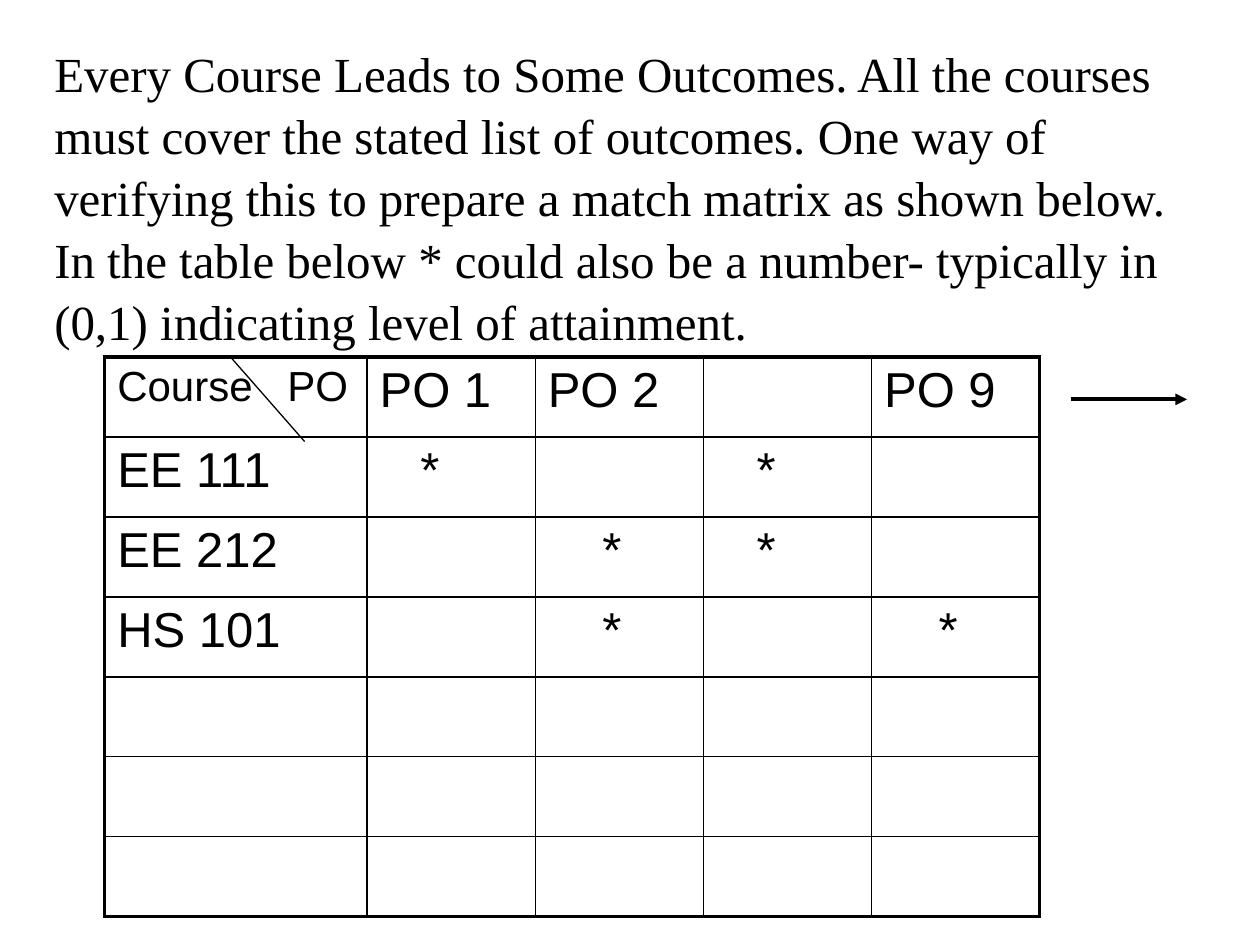
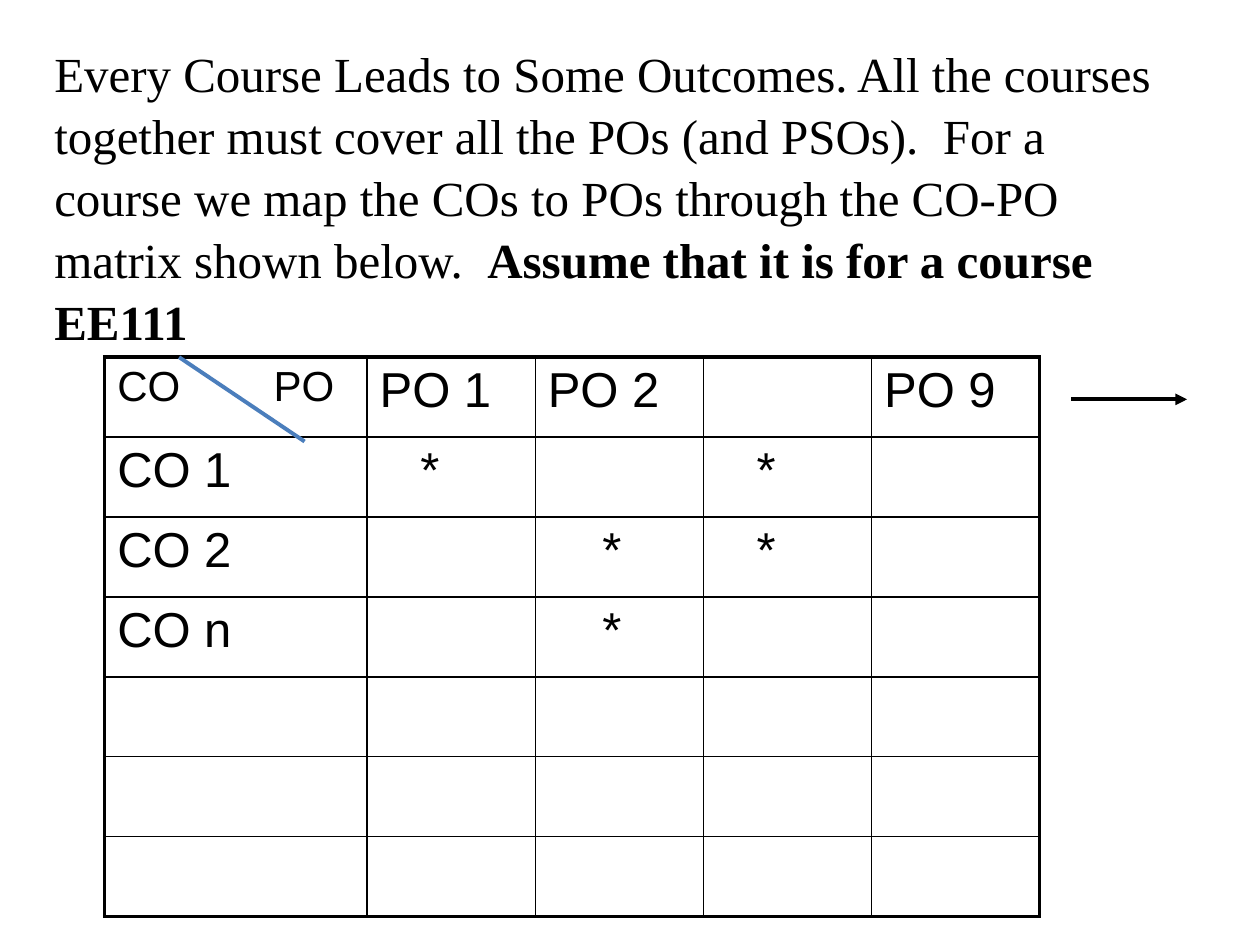
from lxml import etree
from pptx import Presentation
from pptx import util as u
from pptx.dml.color import RGBColor
from pptx.enum import shapes, text
from pptx.oxml import ns

BLACK = RGBColor(0, 0, 0)
BLUE = RGBColor(0x4B, 0x7E, 0xBC)
SERIF, SANS = "Times New Roman", "Arial"
THIN, THICK = 1, 2.25

INTRO = (0.84, 0.7, 23.06, 6.4)
GRID = (2.11, 7.2, 18.85, 11.28)
FIRST, ROWS, COLS = 5.29, 7, 5
HEAD = ["PO 1", "PO 2", "", "PO 9"]
NEAR, FAR = 0.82, 1.1
INDENT = [NEAR, FAR, NEAR, FAR]


def apply(item, style):
    for key, value in style.items():
        setattr(item, key, value)


def write(par, words, font, size, bold=False):
    run = par.add_run()
    run.text = words
    apply(run.font, dict(name=font, size=u.Pt(size), bold=bold))
    run.font.color.rgb = BLACK


def add(parent, tag, **attrs):
    node = etree.SubElement(parent, ns.qn(tag))
    for key, value in attrs.items():
        node.set(key, str(value))
    return node


def draw_intro(slide, box, parts):
    title = slide.shapes.title
    apply(title, dict(zip(("left", "top", "width", "height"), map(u.Cm, box))))
    frame = title.text_frame
    apply(frame, dict(word_wrap=True, auto_size=text.MSO_AUTO_SIZE.NONE,
                      vertical_anchor=text.MSO_ANCHOR.TOP))
    par = frame.paragraphs[0]
    apply(par, dict(alignment=text.PP_ALIGN.LEFT, line_spacing=1.05))
    for words, bold in parts:
        write(par, words, SERIF, 28, bold)


def edge_cell(cell, row, col):
    props = cell._tc.get_or_add_tcPr()
    outer = {"L": col == 0, "R": col == COLS - 1,
             "T": row == 0, "B": row == ROWS - 1}
    for side, thick in outer.items():
        width = u.Pt(THICK if thick else THIN)
        line = add(props, f"a:ln{side}", w=int(width))
        add(add(line, "a:solidFill"), "a:srgbClr", val=BLACK)
    cell.fill.background()


def fill_head(par, pair, stop):
    write(par, "\t".join(pair), SANS, 24)
    tabs = add(par._p.get_or_add_pPr(), "a:tabLst")
    add(tabs, "a:tab", pos=int(u.Cm(stop)), algn="l")


def draw_grid(slide, box, pair, stop, names, marks):
    frame = slide.shapes.add_table(ROWS, COLS, *map(u.Cm, box))
    table = frame.table
    apply(table, dict(first_row=False, horz_banding=False))
    for num, col in enumerate(table.columns):
        col.width = u.Cm(FIRST if num == 0 else (box[2] - FIRST) / (COLS - 1))
    for row in table.rows:
        row.height = u.Cm(box[3] / ROWS)
    for row in range(ROWS):
        for col in range(COLS):
            edge_cell(table.cell(row, col), row, col)

    def par_at(row, col):
        return table.cell(row, col).text_frame.paragraphs[0]

    fill_head(par_at(0, 0), pair, stop)
    for col, name in enumerate(HEAD, 1):
        if name:
            write(par_at(0, col), name, SANS, 28)
    for row, name in enumerate(names, 1):
        write(par_at(row, 0), name, SANS, 28)
    for row, col in marks:
        par = par_at(row, col)
        par._p.get_or_add_pPr().set("marL", str(int(u.Cm(INDENT[col - 1]))))
        write(par, "*", SANS, 28)


def draw_line(slide, box, start, end, color, width, arrow=False):
    ends = [u.Cm(base + step) for point in (start, end)
            for base, step in zip(box, point)]
    line = slide.shapes.add_connector(shapes.MSO_CONNECTOR.STRAIGHT, *ends)
    line.line.color.rgb = color
    line.line.width = u.Pt(width)
    if arrow:
        add(line.line._get_or_add_ln(), "a:tailEnd", type="triangle")
    add(line._element.spPr, "a:effectLst")


def draw_slide(deck, intro, pair, stop, names, marks, slash):
    slide = deck.slides.add_slide(deck.slide_layouts[5])
    draw_intro(slide, INTRO, intro)
    draw_grid(slide, GRID, pair, stop, names, marks)
    start, color, width = slash
    draw_line(slide, GRID, (start, 0), (4.03, 1.7), color, width)
    right = GRID[2] + 0.64
    draw_line(slide, GRID, (right, 0.85), (right + 2.33, 0.85),
              BLACK, THICK, arrow=True)


def main():
    deck = Presentation()
    apply(deck, dict(slide_width=u.Cm(25.4), slide_height=u.Cm(19.05)))
    marks = [(1, 1), (1, 3), (2, 2), (2, 3), (3, 2)]
    draw_slide(
        deck,
        [("Every Course Leads to Some Outcomes. All the courses must cover "
          "the stated list of outcomes. One way of verifying this to prepare "
          "a match matrix as shown below. In the table below * could also be "
          "a number- typically in (0,1) indicating level of attainment.",
          False)],
        ("Course", "PO"), 3.43, ["EE 111", "EE 212", "HS 101"],
        marks + [(3, 4)], (2.54, BLACK, 0.75))
    draw_slide(
        deck,
        [("Every Course Leads to Some Outcomes. All the courses together "
          "must cover all the POs (and PSOs).  For a course we map the COs "
          "to POs through the CO-PO matrix shown below.  ", False),
         ("Assume that it is for a course EE111", True)],
        ("CO", "PO"), 3.15, ["CO 1", "CO 2", "CO n"],
        marks, (1.5, BLUE, THICK))
    deck.save("out.pptx")


if __name__ == "__main__":
    main()
